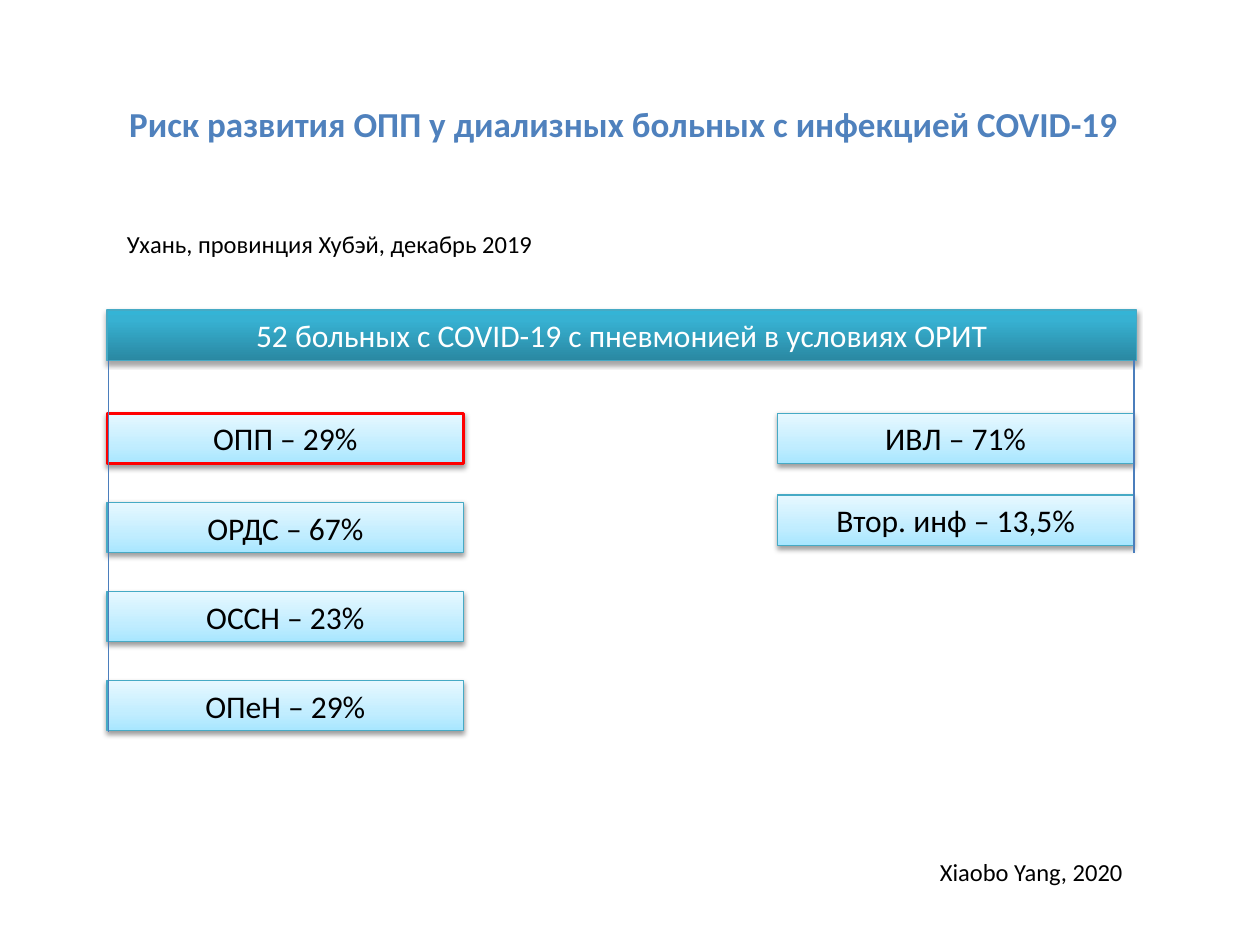
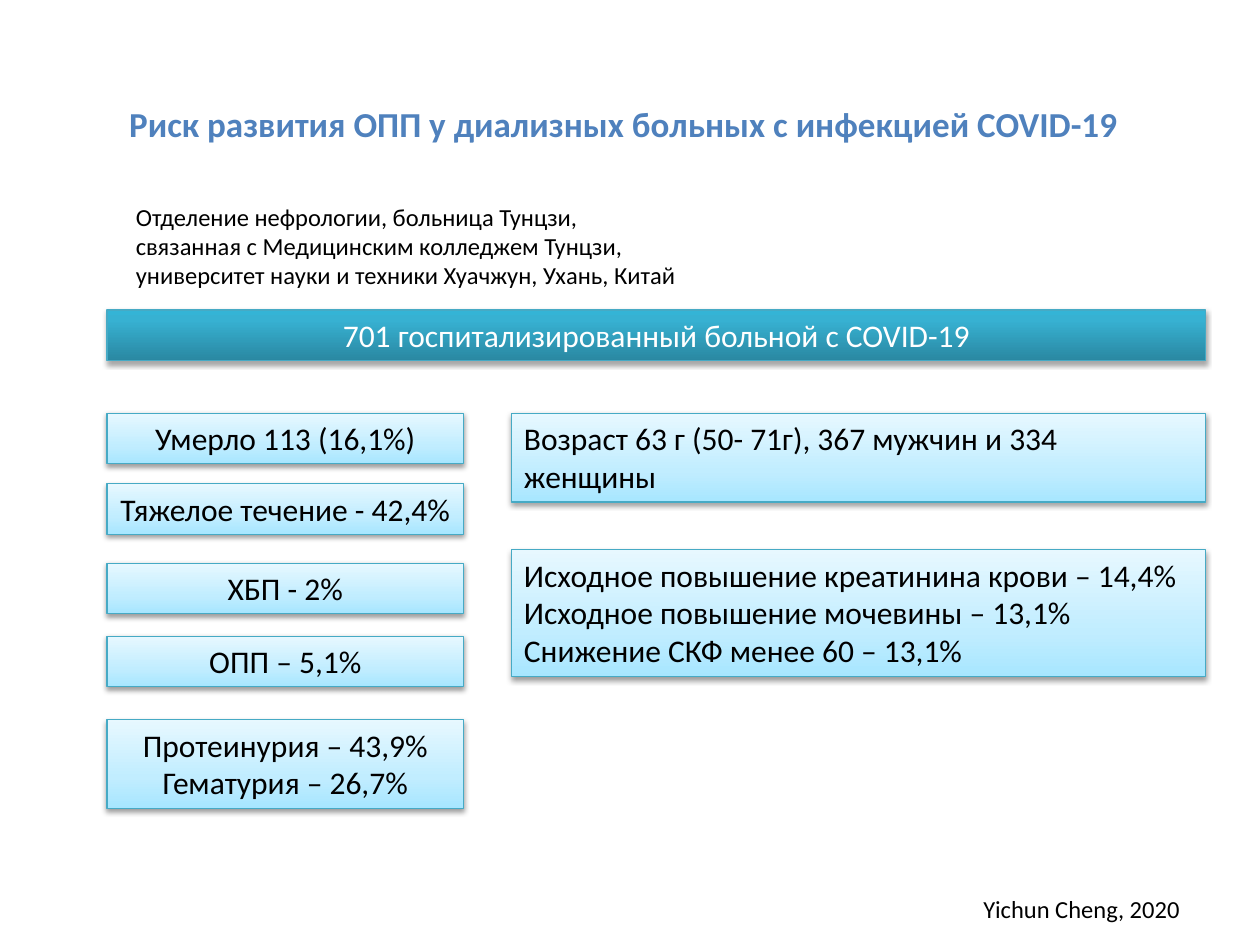
"""Builds two slides on kidney injury risk in patients with COVID-19."""
from lxml.etree import SubElement
from pptx import Presentation
from pptx.dml.color import RGBColor
from pptx.enum.shapes import MSO_CONNECTOR, MSO_SHAPE
from pptx.enum.text import MSO_ANCHOR, MSO_AUTO_SIZE, PP_ALIGN
from pptx.oxml.ns import qn
from pptx.util import Inches, Pt

FONT = "Calibri"
TITLE_BLUE = RGBColor(0x4F, 0x81, 0xBD)
RAIL_BLUE = RGBColor(0x4B, 0x7E, 0xBC)
BORDER_TEAL = RGBColor(0x46, 0xAA, 0xC5)
ALERT_RED = RGBColor(0xFF, 0x00, 0x00)
WHITE = RGBColor(0xFF, 0xFF, 0xFF)
BLACK = RGBColor(0x00, 0x00, 0x00)

BANNER_STYLE = {
    "stops": [(0, RGBColor(0x2A, 0x88, 0xA2)), (80, RGBColor(0x37, 0xB1, 0xD2)),
              (100, RGBColor(0x34, 0xB4, 0xD6))],
    "opacity": 35, "distance": 1.8, "text": WHITE,
}
CARD_STYLE = {
    "stops": [(0, RGBColor(0xA7, 0xE6, 0xFF)), (35, RGBColor(0xC1, 0xED, 0xFF)),
              (100, RGBColor(0xE7, 0xF8, 0xFF))],
    "opacity": 38, "distance": 1.6, "text": BLACK,
}

TITLE = "Риск развития ОПП у диализных больных с инфекцией COVID-19"
TITLE_PLACE = (0.81, 0.76, 8.28, 0.44)
LEFT, BANNER_TOP, CARDS_TOP = 0.85, 2.46, 3.28
CARD_WIDTH, ROW_HEIGHT, LINE_STEP = 2.83, 0.4, 0.305
RIGHT_CARDS = 6.17
BANNER_BOTTOM = BANNER_TOP + ROW_HEIGHT
CENTER, START = PP_ALIGN.CENTER, PP_ALIGN.LEFT

SLIDES = [
    {
        "place": ("Ухань, провинция Хубэй, декабрь 2019", (0.91, 1.77, 3.94, 0.34)),
        "banner": ("52 больных с COVID-19 с пневмонией в условиях ОРИТ", 8.17),
        "columns": [
            {"left": LEFT, "width": CARD_WIDTH, "align": CENTER,
             "tops": [CARDS_TOP + 0.707 * row for row in range(4)],
             "cards": ["ОПП – 29%", "ОРДС – 67%", "ОССН – 23%", "ОПеН – 29%"]},
            {"left": RIGHT_CARDS, "width": CARD_WIDTH, "align": CENTER,
             "tops": [CARDS_TOP, 3.93],
             "cards": ["ИВЛ – 71%", "Втор. инф – 13,5%"]},
        ],
        "alert": "ОПП – 29%",
        "rails": [(0.86, 5.81), (RIGHT_CARDS + CARD_WIDTH, 4.39)],
        "author": ("Xiaobo Yang, 2020", (7.05, 6.75, 2.27, 0.34)),
    },
    {
        "place": ("Отделение нефрологии, больница Тунцзи,\v"
                  "связанная с Медицинским колледжем Тунцзи,\v"
                  "университет науки и техники Хуачжун, Ухань, Китай",
                  (0.98, 1.55, 4.57, 0.81)),
        "banner": ("701 госпитализированный больной с COVID-19", 8.72),
        "columns": [
            {"left": LEFT, "width": CARD_WIDTH, "align": CENTER,
             "tops": [CARDS_TOP, 3.84, 4.47, 5.05, 5.71],
             "cards": ["Умерло 113 (16,1%)", "Тяжелое течение - 42,4%", "ХБП - 2%",
                       "ОПП – 5,1%", "Протеинурия – 43,9%\nГематурия – 26,7%"]},
            {"left": 4.06, "width": 5.51, "align": START,
             "tops": [CARDS_TOP, 4.36], "lines": [2, 3],
             "cards": ["Возраст 63 г (50- 71г), 367 мужчин и 334 женщины",
                       "Исходное повышение креатинина крови – 14,4%\n"
                       "Исходное повышение мочевины – 13,1%\n"
                       "Снижение СКФ менее 60 – 13,1%"]},
        ],
        "alert": None,
        "rails": [],
        "author": ("Yichun Cheng, 2020", (7.52, 7.05, 2.13, 0.34)),
    },
]


def inches(values):
    return [Inches(value) for value in values]


def write(shape, text, size, color, align, bold=False):
    frame = shape.text_frame
    frame.text = text
    frame.word_wrap = True
    frame.auto_size = MSO_AUTO_SIZE.NONE
    for paragraph in frame.paragraphs:
        paragraph.alignment = align
        font = paragraph.font
        font.name, font.size, font.bold = FONT, Pt(size), bold
        font.color.rgb = color


def add_title(slide):
    title = slide.shapes.title
    title.left, title.top, title.width, title.height = inches(TITLE_PLACE)
    write(title, TITLE, 20, TITLE_BLUE, CENTER, bold=True)


def add_label(slide, text, place, align):
    box = slide.shapes.add_textbox(*inches(place))
    write(box, text, 14, BLACK, align)


def add_color(parent, color):
    return SubElement(parent, qn("a:srgbClr"), val=str(color))


def add_panel(slide, text, place, style, align=CENTER, border=BORDER_TEAL, weight=0.75):
    panel = slide.shapes.add_shape(MSO_SHAPE.RECTANGLE, *inches(place))
    panel.line.color.rgb = border
    panel.line.width = Pt(weight)

    panel.fill.gradient()
    panel.fill.gradient_angle = 90
    properties = panel._element.spPr
    stops = properties.find(qn("a:gradFill")).find(qn("a:gsLst"))
    for stop in list(stops):
        stops.remove(stop)
    for position, color in style["stops"]:
        add_color(SubElement(stops, qn("a:gs"), pos=str(position * 1000)), color)

    panel.shadow.inherit = False
    shadow = SubElement(properties.find(qn("a:effectLst")), qn("a:outerShdw"),
                        blurRad=str(Pt(3.1)), dist=str(Pt(style["distance"])),
                        dir="5400000", rotWithShape="0")
    SubElement(add_color(shadow, BLACK), qn("a:alpha"), val=str(style["opacity"] * 1000))

    write(panel, text, 18, style["text"], align)
    panel.text_frame.vertical_anchor = MSO_ANCHOR.TOP


def add_column(slide, column, alert):
    cards = column["cards"]
    line_counts = column.get("lines", [card.count("\n") + 1 for card in cards])
    for card, top, lines in zip(cards, column["tops"], line_counts):
        height = ROW_HEIGHT + LINE_STEP * (lines - 1)
        border, weight = (ALERT_RED, 1.5) if card == alert else (BORDER_TEAL, 0.75)
        add_panel(slide, card, (column["left"], top, column["width"], height),
                  CARD_STYLE, column["align"], border, weight)


def add_rail(slide, x, bottom):
    rail = slide.shapes.add_connector(MSO_CONNECTOR.STRAIGHT,
                                      *inches((x, BANNER_BOTTOM, x, bottom)))
    rail.line.color.rgb = RAIL_BLUE
    rail.line.width = Pt(0.75)
    SubElement(rail._element.spPr, qn("a:effectLst"))


def main():
    deck = Presentation()
    deck.slide_width, deck.slide_height = Inches(10), Inches(7.5)
    for content in SLIDES:
        slide = deck.slides.add_slide(deck.slide_layouts[5])
        add_title(slide)
        add_label(slide, *content["place"], START)
        headline, width = content["banner"]
        add_panel(slide, headline, (LEFT, BANNER_TOP, width, ROW_HEIGHT), BANNER_STYLE)
        for column in content["columns"]:
            add_column(slide, column, content["alert"])
        for x, bottom in content["rails"]:
            add_rail(slide, x, bottom)
        add_label(slide, *content["author"], CENTER)
    deck.save("out.pptx")


if __name__ == "__main__":
    main()
